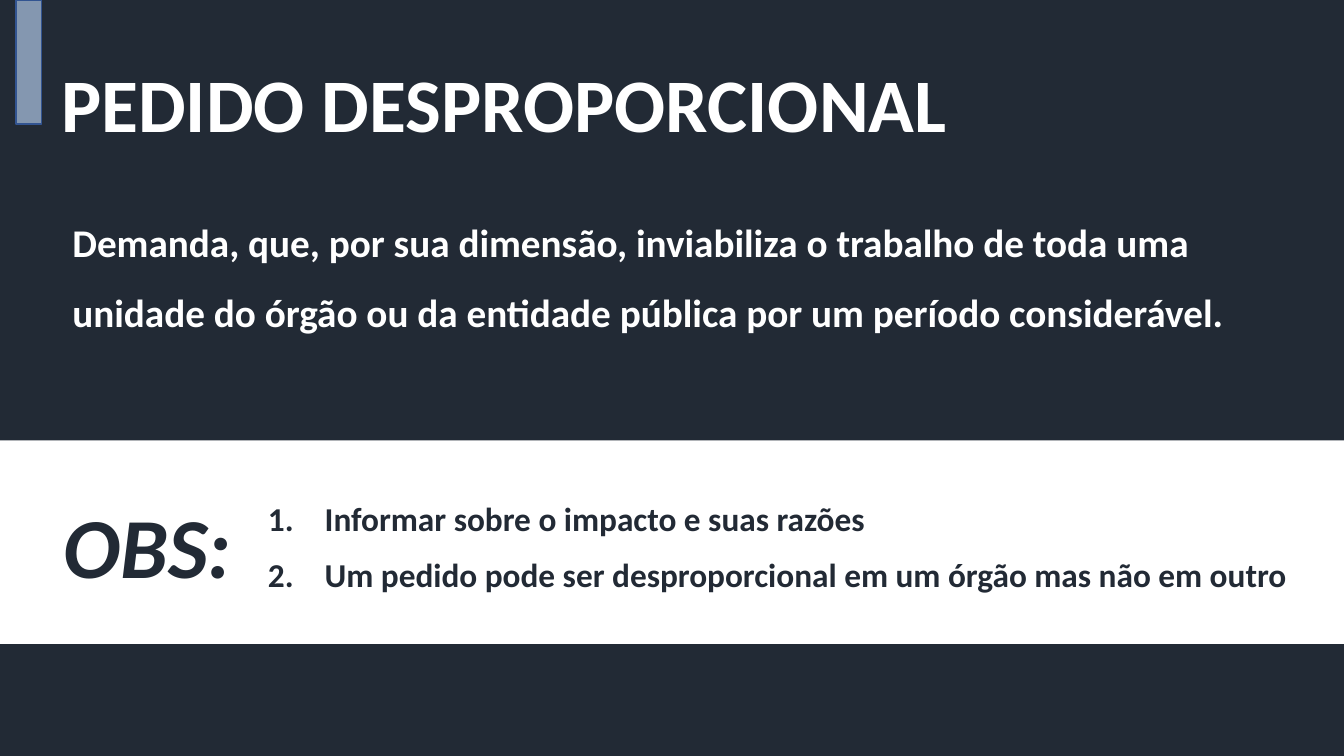
from lxml.etree import SubElement
from pptx import Presentation
from pptx.dml.color import RGBColor
from pptx.enum.shapes import MSO_SHAPE
from pptx.enum.text import MSO_ANCHOR
from pptx.oxml.ns import qn
from pptx.util import Pt

NAVY = RGBColor(0x22, 0x2A, 0x35)
WHITE = RGBColor(0xFF, 0xFF, 0xFF)
STEEL = RGBColor(0x84, 0x97, 0xB0)
BLUE = RGBColor(0x32, 0x54, 0x91)


class SlideBuilder:
    """Draws styled elements on one slide, with lengths in points."""

    font = "Calibri"

    def __init__(self, deck, background):
        self.slide = deck.slides.add_slide(deck.slide_layouts[6])
        fill = self.slide.background.fill
        fill.solid()
        fill.fore_color.rgb = background

    def rectangle(self, left, top, width, height, color, line=None):
        shape = self.slide.shapes.add_shape(
            MSO_SHAPE.RECTANGLE, Pt(left), Pt(top), Pt(width), Pt(height))
        shape.shadow.inherit = False
        shape.fill.solid()
        shape.fill.fore_color.rgb = color
        if line is None:
            shape.line.fill.background()
        else:
            shape.line.color.rgb = line
            shape.line.width = Pt(1)

    def text(self, left, top, width, height, words, size, color,
             spacing, anchor=MSO_ANCHOR.TOP, italic=False):
        box = self.slide.shapes.add_textbox(
            Pt(left), Pt(top), Pt(width), Pt(height))
        frame = box.text_frame
        frame.word_wrap = True
        frame.vertical_anchor = anchor
        frame.text = words
        for para in frame.paragraphs:
            para.line_spacing = spacing
            for span in para.runs:
                span.font.name = self.font
                span.font.size = Pt(size)
                span.font.bold = True
                span.font.italic = italic
                span.font.color.rgb = color
        return frame

    def numbered_list(self, left, top, width, height, items, size, color,
                      spacing, indent):
        frame = self.text(left, top, width, height, "\n".join(items),
                          size, color, spacing)
        for para in frame.paragraphs:
            properties = para._p.get_or_add_pPr()
            properties.set("marL", str(Pt(indent)))
            properties.set("indent", str(-Pt(indent)))
            SubElement(properties, qn("a:buFont"), typeface="+mj-lt")
            SubElement(properties, qn("a:buAutoNum"), type="arabicPeriod")


def main():
    deck = Presentation()
    deck.slide_width, deck.slide_height = Pt(960), Pt(540)
    page = SlideBuilder(deck, NAVY)
    page.rectangle(0, 314.6, 960, 145.4, WHITE)
    page.text(36.7, 36.7, 903, 81.4, "PEDIDO DESPROPORCIONAL",
              54, WHITE, 0.9, MSO_ANCHOR.MIDDLE)
    page.text(44.6, 135.4, 870.5, 118.8,
              "Demanda, que, por sua dimensão, inviabiliza o trabalho de toda "
              "uma unidade do órgão ou da entidade pública por um período "
              "considerável.", 28, WHITE, 1.5)
    page.rectangle(11.5, 0, 18, 88.6, STEEL, BLUE)
    page.numbered_list(
        184.3, 340.6, 761.8, 118.8,
        ["Informar sobre o impacto e suas razões",
         "Um pedido pode ser desproporcional em um órgão mas não em outro"],
        23.8, NAVY, 1.4, 40.5)
    page.text(38.2, 324, 146.2, 100.8, "OBS:", 61, NAVY, 1.4,
              MSO_ANCHOR.MIDDLE, italic=True)
    deck.save("out.pptx")


if __name__ == "__main__":
    main()
